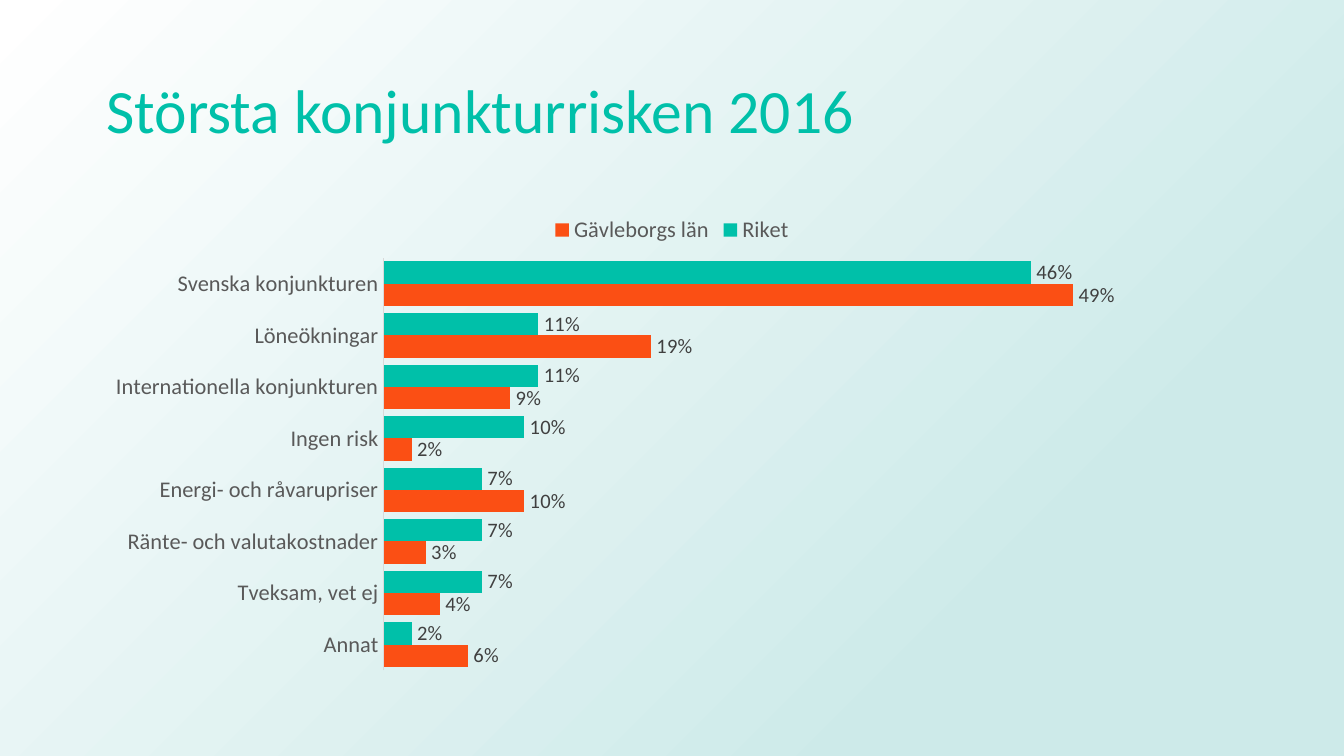
from dataclasses import dataclass

from pptx import Presentation
from pptx.chart.data import CategoryChartData
from pptx.dml.color import RGBColor
from pptx.enum.chart import XL_CHART_TYPE, XL_LABEL_POSITION, XL_LEGEND_POSITION, XL_TICK_MARK
from pptx.enum.shapes import MSO_SHAPE
from pptx.enum.text import MSO_ANCHOR, PP_ALIGN
from pptx.oxml import parse_xml
from pptx.oxml.ns import nsdecls, qn
from pptx.util import Inches, Pt

HEADING = "Största konjunkturrisken 2016"
RISKS = [
    ("Svenska konjunkturen", 0.46, 0.49),
    ("Löneökningar", 0.11, 0.19),
    ("Internationella konjunkturen", 0.11, 0.09),
    ("Ingen risk", 0.10, 0.02),
    ("Energi- och råvarupriser", 0.07, 0.10),
    ("Ränte- och valutakostnader", 0.07, 0.03),
    ("Tveksam, vet ej", 0.07, 0.04),
    ("Annat", 0.02, 0.06),
]
REGIONS = ["Riket", "Gävleborgs län"]


@dataclass(frozen=True)
class Theme:
    font: str = "Calibri"
    teal: str = "00C0A9"
    orange: str = "FB4F14"
    mist: str = "CDEAE9"
    white: str = "FFFFFF"
    black: str = "000000"
    axis_text: str = "595959"
    label_text: str = "404040"
    axis_line: str = "D9D9D9"
    heading_size: int = 33
    axis_size: int = 12
    label_size: int = 11
    chart_size: int = 10


THEME = Theme()
WIDTH = Inches(10)
HEIGHT = WIDTH * 9 // 16
MARGIN = Inches(0.69)
CONTENT_WIDTH = WIDTH - 2 * MARGIN


def color(value):
    return RGBColor.from_string(value)


def style_font(font, size, value):
    font.name = THEME.font
    font.size = Pt(size)
    font.color.rgb = color(value)


def add_backdrop(slide, master):
    backdrop = slide.shapes.add_shape(MSO_SHAPE.RECTANGLE, 0, 0, WIDTH, HEIGHT)
    backdrop.shadow.inherit = False
    backdrop.line.fill.background()
    backdrop.fill.gradient()
    stops = [(0.23, THEME.mist), (1, THEME.white)]
    for stop, (position, value) in zip(backdrop.fill.gradient_stops, stops):
        stop.position = position
        stop.color.rgb = color(value)
    gradient = backdrop._element.spPr.find(qn("a:gradFill"))
    gradient.replace(gradient.find(qn("a:lin")), parse_xml(
        f'<a:path {nsdecls("a")} path="circle"><a:fillToRect l="100000" t="100000"/></a:path>'))
    unused_id = max(part.shape_id for part in master.shapes) + 1
    backdrop._element.nvSpPr.cNvPr.set("id", str(unused_id))
    master.shapes._spTree.insert(2, backdrop._element)


def add_heading(slide):
    heading = slide.shapes.title
    heading.left, heading.top = MARGIN, Inches(0.3)
    heading.width, heading.height = CONTENT_WIDTH, Inches(1.09)
    heading.text_frame.text = HEADING
    heading.text_frame.vertical_anchor = MSO_ANCHOR.MIDDLE
    paragraph = heading.text_frame.paragraphs[0]
    paragraph.alignment = PP_ALIGN.LEFT
    paragraph.line_spacing = 0.9
    style_font(paragraph.runs[0].font, THEME.heading_size, THEME.teal)


def add_risk_chart(slide):
    names, *shares = zip(*RISKS)
    risk_data = CategoryChartData(number_format="0%")
    risk_data.categories = names
    for region, values in zip(REGIONS, shares):
        risk_data.add_series(region, values)
    chart = slide.shapes.add_chart(
        XL_CHART_TYPE.BAR_CLUSTERED, MARGIN, Inches(1.5),
        CONTENT_WIDTH, Inches(3.56), risk_data).chart
    chart.has_title = False
    style_font(chart.font, THEME.chart_size, THEME.black)
    chart._chartSpace.find(qn("c:txPr")).addprevious(parse_xml(
        f'<c:spPr {nsdecls("c", "a")}><a:noFill/><a:ln><a:noFill/></a:ln></c:spPr>'))

    chart.has_legend = True
    chart.legend.position = XL_LEGEND_POSITION.TOP
    chart.legend.include_in_layout = False
    style_font(chart.legend.font, THEME.axis_size, THEME.axis_text)

    risks = chart.category_axis
    risks.reverse_order = True
    risks.major_tick_mark = XL_TICK_MARK.NONE
    risks.format.line.color.rgb = color(THEME.axis_line)
    risks.format.line.width = Pt(0.75)
    style_font(risks.tick_labels.font, THEME.axis_size, THEME.axis_text)

    share_axis = chart.value_axis
    share_axis.visible = False
    share_axis.has_major_gridlines = False
    share_axis.minimum_scale, share_axis.maximum_scale = 0, 0.6

    plot = chart.plots[0]
    plot.vary_by_categories = False
    plot.gap_width, plot.overlap = 30, 0
    for series, value in zip(plot.series, (THEME.teal, THEME.orange)):
        series.format.fill.solid()
        series.format.fill.fore_color.rgb = color(value)
        labels = series.data_labels
        labels.show_value = True
        labels.number_format = "0%"
        labels.number_format_is_linked = False
        labels.position = XL_LABEL_POSITION.OUTSIDE_END
        style_font(labels.font, THEME.label_size, THEME.label_text)


def main():
    presentation = Presentation()
    presentation.slide_width, presentation.slide_height = WIDTH, HEIGHT
    slide = presentation.slides.add_slide(presentation.slide_layouts[5])
    add_backdrop(slide, presentation.slide_master)
    add_heading(slide)
    add_risk_chart(slide)
    presentation.save("out.pptx")


if __name__ == "__main__":
    main()
